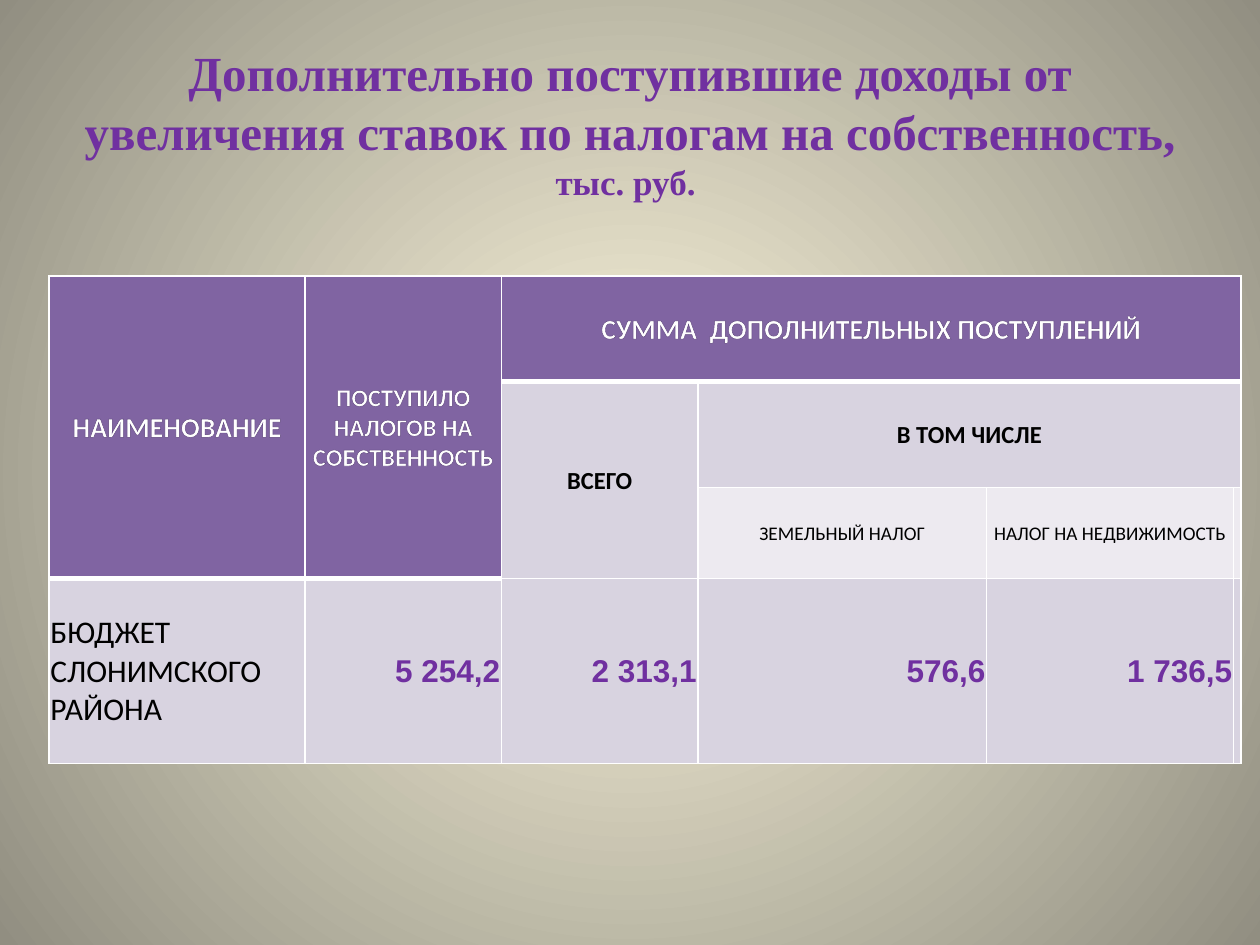
from dataclasses import dataclass

from lxml.etree import SubElement
from pptx import Presentation
from pptx.dml.color import RGBColor
from pptx.enum.text import MSO_ANCHOR as Anchor, PP_ALIGN as Align
from pptx.oxml import parse_xml
from pptx.oxml.ns import nsdecls, qn
from pptx.slide import Slide
from pptx.table import Table, _Cell as Cell
from pptx.util import Inches, Pt

PURPLE, HEADER, BAND, LIGHT = "7030A0", "8064A2", "D8D3E0", "EDEAF0"
WHITE, BLACK, OUTLINE = "FFFFFF", "000000", "5E457C"
COLUMN_WIDTHS = [2.03, 1.56, 1.56, 2.29, 1.96, 0.04]
ROW_HEIGHTS = [0.84, 0.84, 0.66, 1.47]
ROW_FILLS = [HEADER, BAND, LIGHT, BAND]


@dataclass(frozen=True)
class Entry:
    """Text of one table cell with its place, span and font."""

    row: int
    column: int
    text: str
    size: int
    color: str = BLACK
    bold: bool = True
    font: str = "Calibri"
    align: Align = Align.CENTER
    rows: int = 1
    columns: int = 1
    outlined: bool = False


HEADINGS = [
    Entry(0, 0, "НАИМЕНОВАНИЕ", 16, WHITE, rows=3, outlined=True),
    Entry(0, 1, "ПОСТУПИЛО НАЛОГОВ НА СОБСТВЕННОСТЬ", 14, WHITE, rows=3, outlined=True),
    Entry(0, 2, "СУММА  ДОПОЛНИТЕЛЬНЫХ ПОСТУПЛЕНИЙ", 16, WHITE, columns=4, outlined=True),
    Entry(1, 2, "ВСЕГО", 14, rows=2),
    Entry(1, 3, "В ТОМ ЧИСЛЕ", 14, columns=3),
    Entry(2, 3, "ЗЕМЕЛЬНЫЙ НАЛОГ", 11, bold=False),
    Entry(2, 4, "НАЛОГ НА НЕДВИЖИМОСТЬ", 11, bold=False),
    Entry(3, 0, "БЮДЖЕТ СЛОНИМСКОГО РАЙОНА", 18, bold=False, align=Align.LEFT),
]
AMOUNTS = [
    Entry(3, column, amount, 18, PURPLE, font="Arial", align=Align.RIGHT)
    for column, amount in enumerate(["5 254,2", "2 313,1", "576,6", "1 736,5"], start=1)
]


def rgb(color: str) -> RGBColor:
    """Turn a hex string into a colour."""
    return RGBColor.from_string(color)


def set_font(font, name: str, size: int, color: str, bold: bool) -> None:
    """Set the face, size, colour and weight of a font."""
    font.name, font.size, font.bold = name, Pt(size), bold
    font.color.rgb = rgb(color)


def paint_background(slide: Slide) -> None:
    """Fill the slide with a round gradient from its centre."""
    fill = slide.background.fill
    fill.gradient()
    for stop, color in zip(fill.gradient_stops, ["FCF7DD", "918E81"]):
        stop.color.rgb = rgb(color)
    gradient = slide.background._cSld.find(".//" + qn("a:gradFill"))
    gradient.remove(gradient.find(qn("a:lin")))
    circle = SubElement(gradient, qn("a:path"), path="circle")
    SubElement(circle, qn("a:fillToRect"), l="50000", t="50000", r="50000", b="50000")


def write_title(slide: Slide) -> None:
    """Place the two-size title."""
    title = slide.shapes.title
    title.left, title.top = Inches(0.5), Inches(0.23)
    title.width, title.height = Inches(9), Inches(1.48)
    title.text_frame.vertical_anchor = Anchor.MIDDLE
    paragraph = title.text_frame.paragraphs[0]
    paragraph.alignment = Align.CENTER
    parts = [
        ("Дополнительно поступившие доходы от увеличения ставок по налогам на собственность, ", 28),
        ("тыс. руб. ", 20),
    ]
    for text, size in parts:
        run = paragraph.add_run()
        run.text = text
        set_font(run.font, "Times New Roman", size, PURPLE, True)


def line_xml(tag: str, width: float, color: str):
    """Build a solid line element."""
    return parse_xml(
        f'<a:{tag} {nsdecls("a")} w="{Pt(width)}"><a:solidFill>'
        f'<a:srgbClr val="{color}"/></a:solidFill></a:{tag}>'
    )


def under_header(row: int, column: int) -> bool:
    """Tell whether a cell lies directly below the purple header."""
    return row == (3 if column < 2 else 1)


def style_cell(cell: Cell, row: int, column: int) -> None:
    """Set the fill, margins and borders of one cell."""
    cell.fill.solid()
    cell.fill.fore_color.rgb = rgb(HEADER if column < 2 and row < 3 else ROW_FILLS[row])
    cell.margin_left = cell.margin_right = cell.margin_top = Inches(0.01)
    cell.margin_bottom = 0
    cell.vertical_anchor = Anchor.MIDDLE
    top = 3 if under_header(row, column) else 1
    bottom = 3 if under_header(row + 1, column) else 1
    borders = {"lnL": 1, "lnR": 1, "lnT": top, "lnB": bottom}
    for index, (tag, width) in enumerate(borders.items()):
        cell._tc.get_or_add_tcPr().insert(index, line_xml(tag, width, WHITE))


def write_entry(table: Table, entry: Entry) -> None:
    """Merge the span of an entry and write its text."""
    cell = table.cell(entry.row, entry.column)
    if entry.rows > 1 or entry.columns > 1:
        last_row, last_column = entry.row + entry.rows - 1, entry.column + entry.columns - 1
        cell.merge(table.cell(last_row, last_column))
    paragraph = cell.text_frame.paragraphs[0]
    paragraph.alignment = entry.align
    run = paragraph.add_run()
    run.text = entry.text
    set_font(run.font, entry.font, entry.size, entry.color, entry.bold)
    if entry.outlined:
        run._r.get_or_add_rPr().insert(0, line_xml("ln", 0.71, OUTLINE))


def add_tax_table(slide: Slide) -> None:
    """Add the table of property tax receipts."""
    frame = slide.shapes.add_table(
        len(ROW_HEIGHTS), len(COLUMN_WIDTHS),
        Inches(0.39), Inches(2.19), Inches(9.45), Inches(3.81),
    )
    table = frame.table
    table.horz_banding = table.first_row = False
    for column, width in zip(table.columns, COLUMN_WIDTHS):
        column.width = Inches(width)
    for row, height in zip(table.rows, ROW_HEIGHTS):
        row.height = Inches(height)
    for row in range(len(ROW_HEIGHTS)):
        for column in range(len(COLUMN_WIDTHS)):
            style_cell(table.cell(row, column), row, column)
    for entry in HEADINGS + AMOUNTS:
        write_entry(table, entry)


def main() -> None:
    """Build and save the slide."""
    presentation = Presentation()
    presentation.slide_width, presentation.slide_height = Inches(10), Inches(7.5)
    slide = presentation.slides.add_slide(presentation.slide_layouts[5])
    paint_background(slide)
    write_title(slide)
    add_tax_table(slide)
    presentation.save("out.pptx")


if __name__ == "__main__":
    main()
